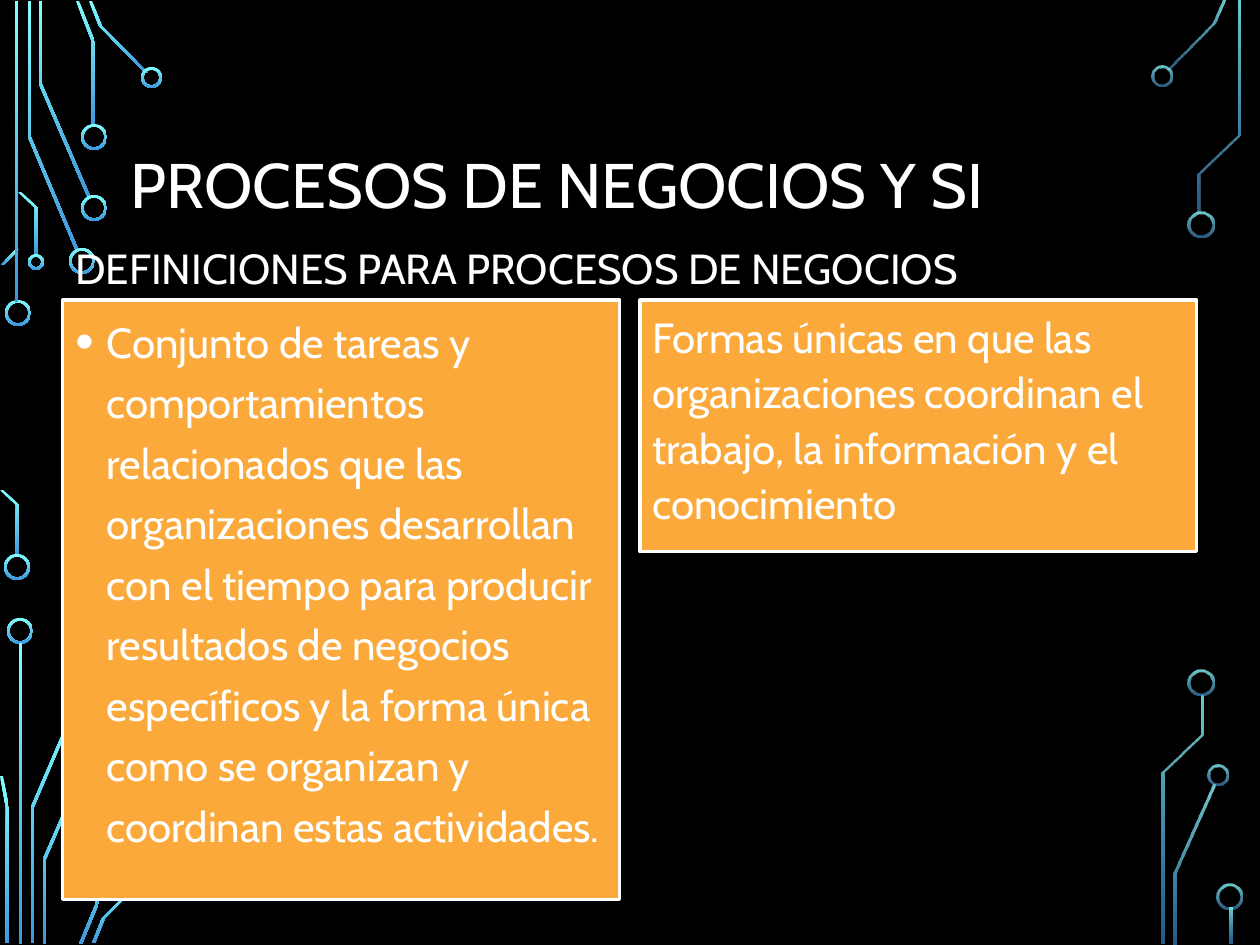
from lxml.etree import SubElement
from pptx import Presentation
from pptx.dml.color import RGBColor
from pptx.enum.shapes import MSO_SHAPE
from pptx.enum.text import MSO_ANCHOR, PP_ALIGN
from pptx.oxml.ns import qn
from pptx.util import Emu, Pt

SCALE = 914400 / 126  # EMU in one px
BLACK = RGBColor(0x00, 0x00, 0x00)
WHITE = RGBColor(0xFF, 0xFF, 0xFF)
ORANGE = RGBColor(0xFA, 0xA9, 0x3A)
CYAN = RGBColor(0x82, 0xFF, 0xFF)
BLUE = RGBColor(0x3D, 0x97, 0xDE)
FONT = "Cabin"
WIDE = 3  # width of a trace

# Left edge of each trace, point by point
LEFT_LINES = [
    [(28, 1), (28, 137), (76, 251)],
    [(39, 1), (39, 84), (88, 198)],
    [(76, 1), (92, 42), (92, 126)],
    [(89, 1), (99, 26), (145, 73)],
    [(1, 265), (16, 249)],
    [(0, 490), (16, 505), (16, 556)],
    [(18, 192), (35, 208), (35, 256)],
    [(31, 943), (31, 807), (79, 695)],
    [(0, 776), (6, 808), (6, 943)],
    [(43, 944), (43, 859), (91, 748)],
    [(79, 944), (96, 903), (96, 819)],
    [(92, 943), (102, 918), (147, 873)],
]
RIGHT_LINES = [
    [(1167, 70), (1212, 24), (1222, 0)],
    [(1174, 944), (1174, 873), (1212, 785)],
    [(1198, 213), (1198, 174), (1237, 135), (1237, 1)],
    [(1162, 944), (1162, 773), (1200, 735), (1200, 696)],
]
# Rings: left, top, size
LEFT_RINGS = [(5, 300, 26), (4, 554, 26), (69, 248, 26), (81, 195, 26),
              (81, 124, 26), (141, 67, 21), (28, 254, 16), (7, 618, 26)]
RIGHT_RINGS = [(1151, 66, 21), (1188, 212, 26), (1207, 765, 21),
               (1188, 670, 26), (1217, 884, 26)]
# Upright bars: left, top, height
LEFT_BARS = [(15, 1, 301), (19, 643, 301)]
RIGHT_BARS = [(1230, 908, 36)]


def px(*nums):
    return [Emu(round(n * SCALE)) for n in nums]


class Deck:
    def __init__(self, width, height):
        self.prs = Presentation()
        self.prs.slide_width, self.prs.slide_height = px(width, height)
        self.slide = self.prs.slides.add_slide(self.prs.slide_layouts[6])
        self.shapes = self.slide.shapes
        back = self.slide.background.fill
        back.solid()
        back.fore_color.rgb = BLACK

    def glow(self, shape, alphas):
        """Fill from cyan at the top to blue at the foot."""
        shape.shadow.inherit = False
        shape.line.fill.background()
        shape.fill.gradient()
        shape.fill.gradient_angle = 270
        for stop, color, place in zip(shape.fill.gradient_stops, (CYAN, BLUE), (0, 1)):
            stop.color.rgb = color
            stop.position = place
        for node, alpha in zip(shape.element.iter(qn("a:srgbClr")), alphas):
            if alpha < 100:
                SubElement(node, qn("a:alpha"), val=str(alpha * 1000))

    def trace(self, points, alphas):
        far = [(x + WIDE, y) for x, y in reversed(points)]
        form = self.shapes.build_freeform(*points[0], scale=SCALE)
        form.add_line_segments(points[1:] + far, close=True)
        self.glow(form.convert_to_shape(), alphas)

    def ring(self, left, top, size, alphas):
        shape = self.shapes.add_shape(MSO_SHAPE.DONUT, *px(left, top, size, size))
        shape.adjustments[0] = round(2.5 / size, 2)
        self.glow(shape, alphas)

    def bar(self, left, top, height, alphas):
        shape = self.shapes.add_shape(MSO_SHAPE.RECTANGLE, *px(left, top, WIDE, height))
        self.glow(shape, alphas)

    def circuit(self, lines, rings, bars, alphas):
        for line in lines:
            self.trace(line, alphas)
        for ring in rings:
            self.ring(*ring, alphas)
        for bar in bars:
            self.bar(*bar, alphas)

    def put_text(self, shape, text, size, space, anchor, dot=False):
        frame = shape.text_frame
        frame.word_wrap = True
        frame.vertical_anchor = anchor
        frame.text = text
        para = frame.paragraphs[0]
        para.alignment = PP_ALIGN.LEFT
        para.line_spacing = space
        if dot:
            props = para._p.get_or_add_pPr()
            props.set("marL", "228600")
            props.set("indent", "-228600")
            SubElement(props, qn("a:buSzPct"), val="125000")
            SubElement(props, qn("a:buFont"), typeface="Arial")
            SubElement(props, qn("a:buChar"), char="•")
        font = para.runs[0].font
        font.name, font.size = FONT, Pt(size)
        font.color.rgb = WHITE

    def label(self, box, text, size, anchor):
        self.put_text(self.shapes.add_textbox(*px(*box)), text, size, 0.9, anchor)

    def card(self, box, text, space, dot=False):
        shape = self.shapes.add_shape(MSO_SHAPE.RECTANGLE, *px(*box))
        shape.shadow.inherit = False
        shape.fill.solid()
        shape.fill.fore_color.rgb = ORANGE
        shape.line.color.rgb = WHITE
        shape.line.width = Pt(1.75)
        self.put_text(shape, text, 24, space, MSO_ANCHOR.TOP, dot)


def main():
    deck = Deck(1260, 945)

    # Circuit traces on both sides
    deck.circuit(LEFT_LINES, LEFT_RINGS, LEFT_BARS, (100, 100))
    deck.circuit(RIGHT_LINES, RIGHT_RINGS, RIGHT_BARS, (80, 60))

    # Headings
    deck.label((118, 86, 1023, 204), "PROCESOS DE NEGOCIOS Y SI", 36, MSO_ANCHOR.MIDDLE)
    deck.label((63, 212, 1133, 88), "DEFINICIONES PARA PROCESOS DE NEGOCIOS",
               24, MSO_ANCHOR.BOTTOM)

    # Definitions
    deck.card((63, 300, 557, 600),
              "Conjunto de tareas y comportamientos relacionados que las "
              "organizaciones desarrollan con el tiempo para producir resultados "
              "de negocios específicos y la forma única como se organizan y "
              "coordinan estas actividades.", 1.2, dot=True)
    deck.card((640, 300, 557, 252),
              "Formas únicas en que las organizaciones coordinan el trabajo, "
              "la información y el conocimiento", 1.1)

    deck.prs.save("out.pptx")


if __name__ == "__main__":
    main()
